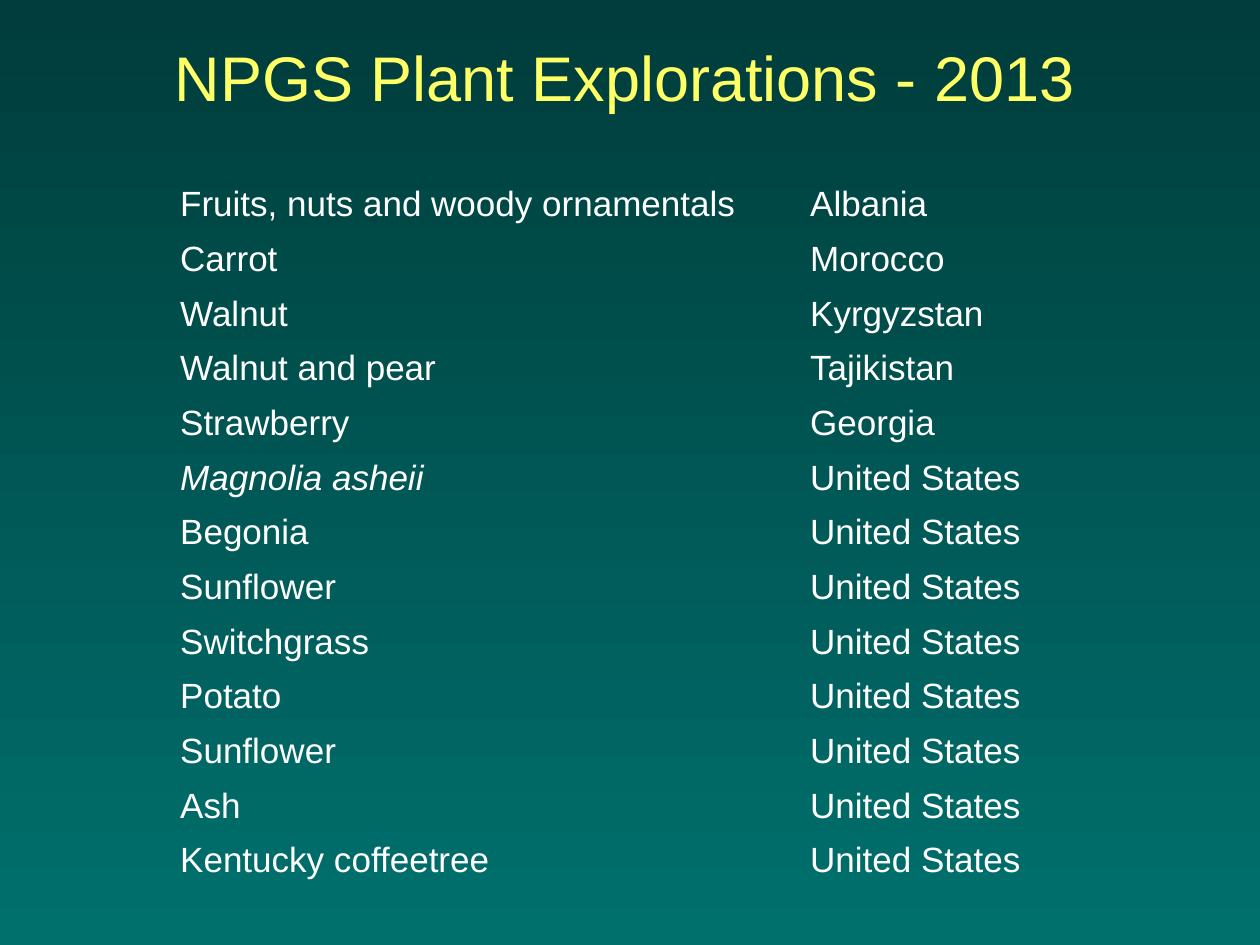
from pptx import Presentation
from pptx.dml.color import RGBColor
from pptx.enum.text import MSO_ANCHOR as Anchor, MSO_AUTO_SIZE as AutoSize, PP_ALIGN as Align
from pptx.util import Inches, Pt

TOP_TEAL = RGBColor(0x00, 0x3D, 0x3C)
BOTTOM_TEAL = RGBColor(0x00, 0x70, 0x6D)
YELLOW = RGBColor(0xFF, 0xFF, 0x66)
WHITE = RGBColor(0xFF, 0xFF, 0xFF)

EXPLORATIONS = [
    ("Fruits, nuts and woody ornamentals", "Albania"),
    ("Carrot", "Morocco"),
    ("Walnut", "Kyrgyzstan"),
    ("Walnut and pear", "Tajikistan"),
    ("Strawberry", "Georgia"),
    ("Magnolia asheii", "United States"),
    ("Begonia", "United States"),
    ("Sunflower", "United States"),
    ("Switchgrass", "United States"),
    ("Potato", "United States"),
    ("Sunflower", "United States"),
    ("Ash", "United States"),
    ("Kentucky coffeetree", "United States"),
]
LATIN_NAMES = {"Magnolia asheii"}
COLUMN_WIDTHS = (5, 4.64)
TABLE_HEIGHT = 5.63


def style_font(font, size, color):
    font.name = "Arial"
    font.size = Pt(size)
    font.color.rgb = color


def paint_background(page):
    fill = page.background.fill
    fill.gradient()
    fill.gradient_angle = 270  # counter-clockwise: top to bottom
    for stop, color in zip(fill.gradient_stops, (TOP_TEAL, BOTTOM_TEAL)):
        stop.color.rgb = color


def set_title(page, text):
    title = page.shapes.title
    title.left, title.top = Inches(0.92), Inches(0.42)
    title.width, title.height = Inches(8.08), Inches(0.52)
    frame = title.text_frame
    frame.text = text
    frame.word_wrap = True
    frame.auto_size = AutoSize.SHAPE_TO_FIT_TEXT
    frame.vertical_anchor = Anchor.TOP
    para = frame.paragraphs[0]
    para.alignment = Align.CENTER
    para.line_spacing = 0.7
    style_font(para.font, 36, YELLOW)


def fill_cell(cell, text):
    cell.fill.background()
    cell.text = text
    para = cell.text_frame.paragraphs[0]
    style_font(para.font, 20, WHITE)
    para.font.bold = False
    para.font.italic = text in LATIN_NAMES


def add_explorations_table(page):
    frame = page.shapes.add_table(
        len(EXPLORATIONS), len(COLUMN_WIDTHS), Inches(1.33), Inches(1.42),
        Inches(sum(COLUMN_WIDTHS)), Inches(TABLE_HEIGHT))
    table = frame.table
    table.first_row = table.horz_banding = False
    for column, width in zip(table.columns, COLUMN_WIDTHS):
        column.width = Inches(width)
    for row, texts in zip(table.rows, EXPLORATIONS):
        for cell, text in zip(row.cells, texts):
            fill_cell(cell, text)

    # Plain table style without grid lines
    style_id = table._tbl.tblPr.find("{*}tableStyleId")
    style_id.text = "{2D5ABB26-0587-4C30-8999-92F81FD0307C}"


def main():
    deck = Presentation()
    deck.slide_width, deck.slide_height = Inches(10), Inches(7.5)
    page = deck.slides.add_slide(deck.slide_layouts[5])
    paint_background(page)
    set_title(page, "NPGS Plant Explorations - 2013")
    add_explorations_table(page)
    deck.save("out.pptx")


if __name__ == "__main__":
    main()
